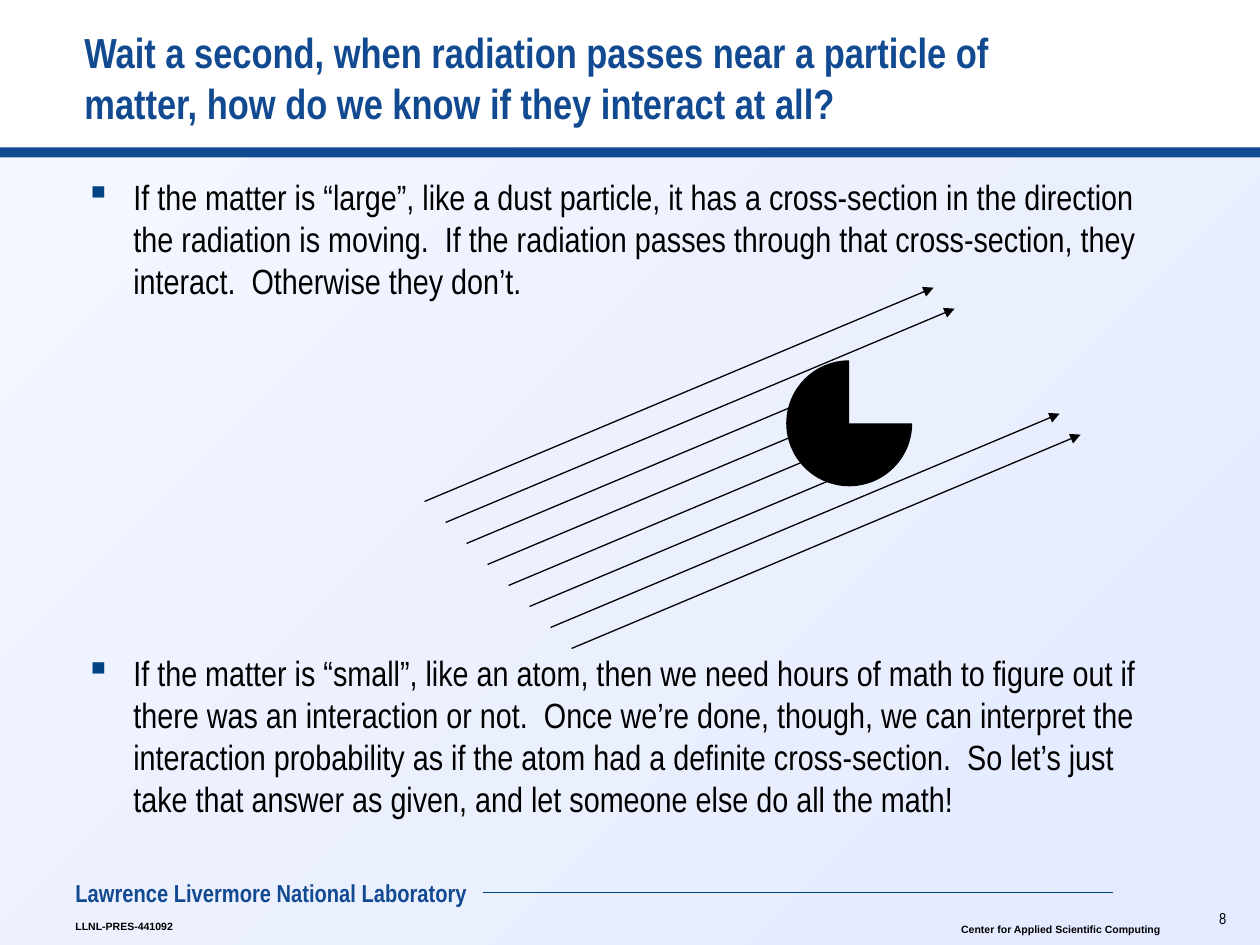
"""Build a slide on how radiation interacts with large and small matter."""
from lxml.etree import SubElement
from pptx import Presentation
from pptx.dml.color import RGBColor
from pptx.enum.shapes import MSO_CONNECTOR, MSO_SHAPE
from pptx.enum.text import MSO_ANCHOR, PP_ALIGN
from pptx.oxml.ns import qn
from pptx.util import Inches, Pt

BLACK = RGBColor(0x00, 0x00, 0x00)
BLUE = RGBColor(0x12, 0x4A, 0x91)
ACCENT = RGBColor(0x00, 0x44, 0x83)
PALE_START = RGBColor(0xF4, 0xF7, 0xFF)
PALE_END = RGBColor(0xE4, 0xEA, 0xFF)

TITLE = ("Wait a second, when radiation passes near a particle of matter, "
         "how do we know if they interact at all?")
BULLETS = [
    ("If the matter is “large”, like a dust particle, it has a cross-section in the "
     "direction the radiation is moving.  If the radiation passes through that "
     "cross-section, they interact.  Otherwise they don’t."),
    ("If the matter is “small”, like an atom, then we need hours of math to figure out "
     "if there was an interaction or not.  Once we’re done, though, we can interpret the "
     "interaction probability as if the atom had a definite cross-section.  So let’s just "
     "take that answer as given, and let someone else do all the math!"),
]
BULLET_GAP = Pt(200)
BULLET_INDENT = Inches(0.38)

NARROW = {"name": "Arial Narrow", "color": BLACK}
SMALL = {"name": "Arial", "size": Pt(6), "bold": True, "color": BLACK}
HEADING = {"name": "Arial Narrow", "size": Pt(24), "bold": True, "color": BLUE}
BODY = {**NARROW, "size": Pt(20)}
PAGE_NUMBER = {**NARROW, "size": Pt(9)}
LABORATORY = {**HEADING, "size": Pt(14)}

FOOTERS = [
    ("LLNL-PRES-441092", (0.5, 7.25, 0.99, 0.2), SMALL),
    ("Center for Applied Scientific Computing", (7.53, 7.28, 1.78, 0.2), SMALL),
    ("Lawrence Livermore National Laboratory", (0.5, 6.92, 3.58, 0.33), LABORATORY),
]

RAY_WIDTHS = [4.04, 4.04, 2.9, 2.61, 2.66, 2.77, 4.04, 4.04]
RAY_START = (3.37, 3.98)
RAY_STEP = 1 / 6
RAY_SLOPE = 0.42


def format_font(font, values):
    for name, value in values.items():
        if name == "color":
            font.color.rgb = value
        else:
            setattr(font, name, value)


def add_text(slide, texts, box, values, wrap=True, left_inset=0.1):
    frame = slide.shapes.add_textbox(*map(Inches, box)).text_frame
    frame.word_wrap = wrap
    frame.margin_left = Inches(left_inset)
    for index, text in enumerate(texts):
        paragraph = frame.add_paragraph() if index else frame.paragraphs[0]
        run = paragraph.add_run()
        run.text = text
        format_font(run.font, values)
    return frame


def add_bullet(paragraph):
    properties = paragraph._p.get_or_add_pPr()
    properties.set("marL", str(BULLET_INDENT))
    properties.set("indent", str(-BULLET_INDENT))
    color = SubElement(properties, qn("a:buClr"))
    SubElement(color, qn("a:srgbClr"), val=str(ACCENT))
    SubElement(properties, qn("a:buChar"), char="▪")


def add_shape(slide, kind, box):
    shape = slide.shapes.add_shape(kind, *map(Inches, box))
    shape.shadow.inherit = False
    shape.line.fill.background()
    return shape


def add_solid(slide, kind, box, color):
    shape = add_shape(slide, kind, box)
    shape.fill.solid()
    shape.fill.fore_color.rgb = color


def add_line(slide, start, end, color, width, arrow=False):
    points = map(Inches, (*start, *end))
    connector = slide.shapes.add_connector(MSO_CONNECTOR.STRAIGHT, *points)
    connector.line.color.rgb = color
    connector.line.width = Pt(width)
    if arrow:
        SubElement(connector.line._get_or_add_ln(), qn("a:tailEnd"), type="triangle")
    SubElement(connector._element.spPr, qn("a:effectLst"))


def add_background(slide):
    panel = add_shape(slide, MSO_SHAPE.RECTANGLE, (0, 1.17, 10, 6.33))
    panel.fill.gradient()
    panel.fill.gradient_angle = 315
    stops = panel.fill.gradient_stops
    for stop, position, color in zip(stops, (0, 1), (PALE_START, PALE_END)):
        stop.position = position
        stop.color.rgb = color
    add_solid(slide, MSO_SHAPE.RECTANGLE, (0, 1.17, 10, 0.08), BLUE)


def add_footer(slide):
    add_line(slide, (3.83, 7.08), (8.83, 7.08), ACCENT, 0.5)
    for text, box, values in FOOTERS:
        add_text(slide, [text], box, values, wrap=values is LABORATORY)
    number = add_text(slide, ["8"], (9.49, 7.2, 0.34, 0.21), PAGE_NUMBER, left_inset=0)
    number.paragraphs[0].alignment = PP_ALIGN.RIGHT
    number.paragraphs[0].line_spacing = 0.75


def add_content(slide):
    title = add_text(slide, [TITLE], (0.67, 0.17, 7.42, 0.89), HEADING, left_inset=0)
    title.vertical_anchor = MSO_ANCHOR.BOTTOM
    body = add_text(slide, BULLETS, (0.58, 1.34, 8.68, 5.3), BODY)
    for paragraph in body.paragraphs:
        add_bullet(paragraph)
    body.paragraphs[1].space_before = BULLET_GAP


def add_diagram(slide):
    add_solid(slide, MSO_SHAPE.PIE, (6.24, 2.86, 1, 1), BLACK)
    for index, width in enumerate(RAY_WIDTHS):
        left, top = (value + index * RAY_STEP for value in RAY_START)
        end = (left + width, top - width * RAY_SLOPE)
        add_line(slide, (left, top), end, BLACK, 0.75, arrow=True)


def main():
    presentation = Presentation()
    presentation.slide_width = Inches(10)
    presentation.slide_height = Inches(7.5)
    slide = presentation.slides.add_slide(presentation.slide_layouts[6])
    add_background(slide)
    add_footer(slide)
    add_content(slide)
    add_diagram(slide)
    presentation.save("out.pptx")


if __name__ == "__main__":
    main()
